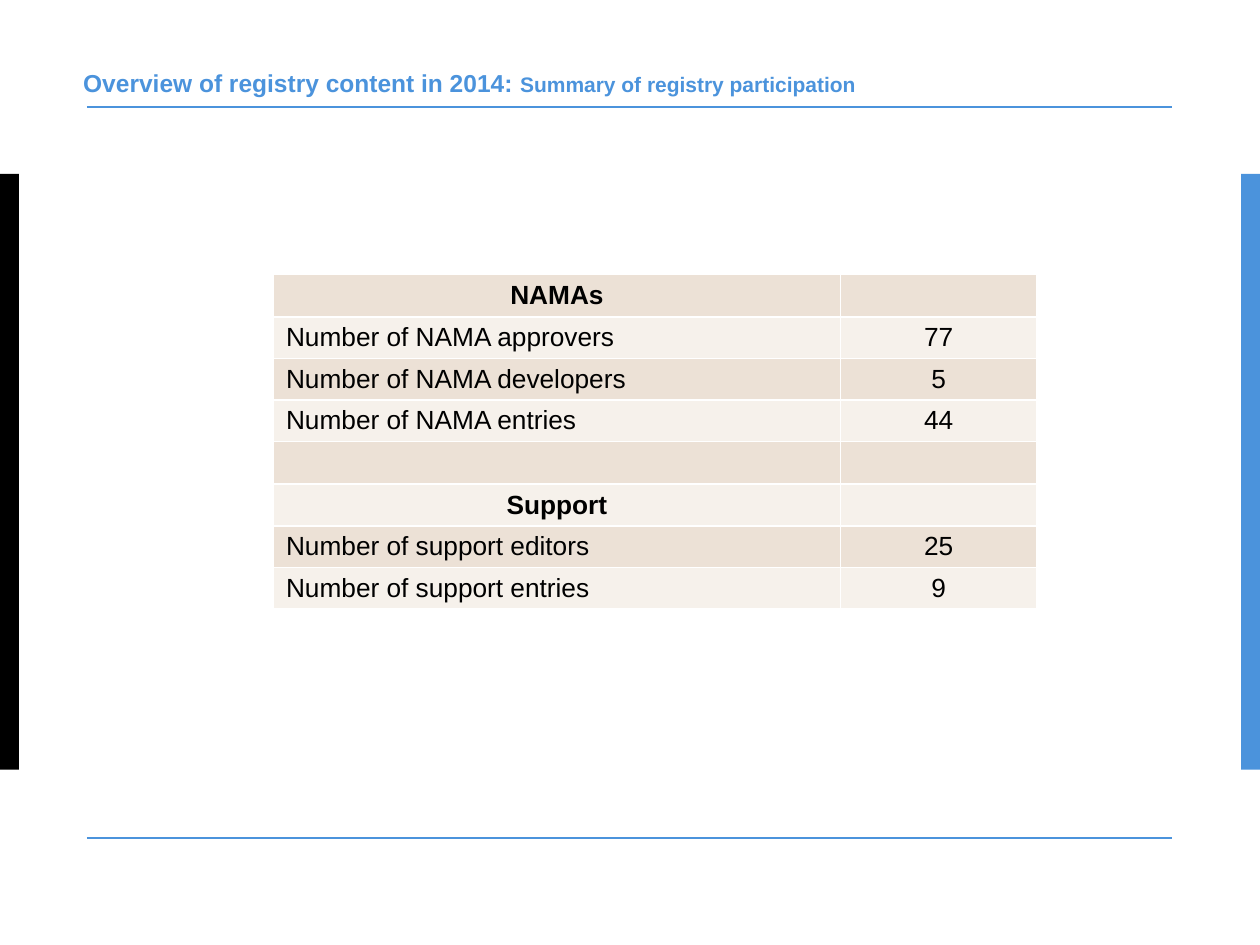
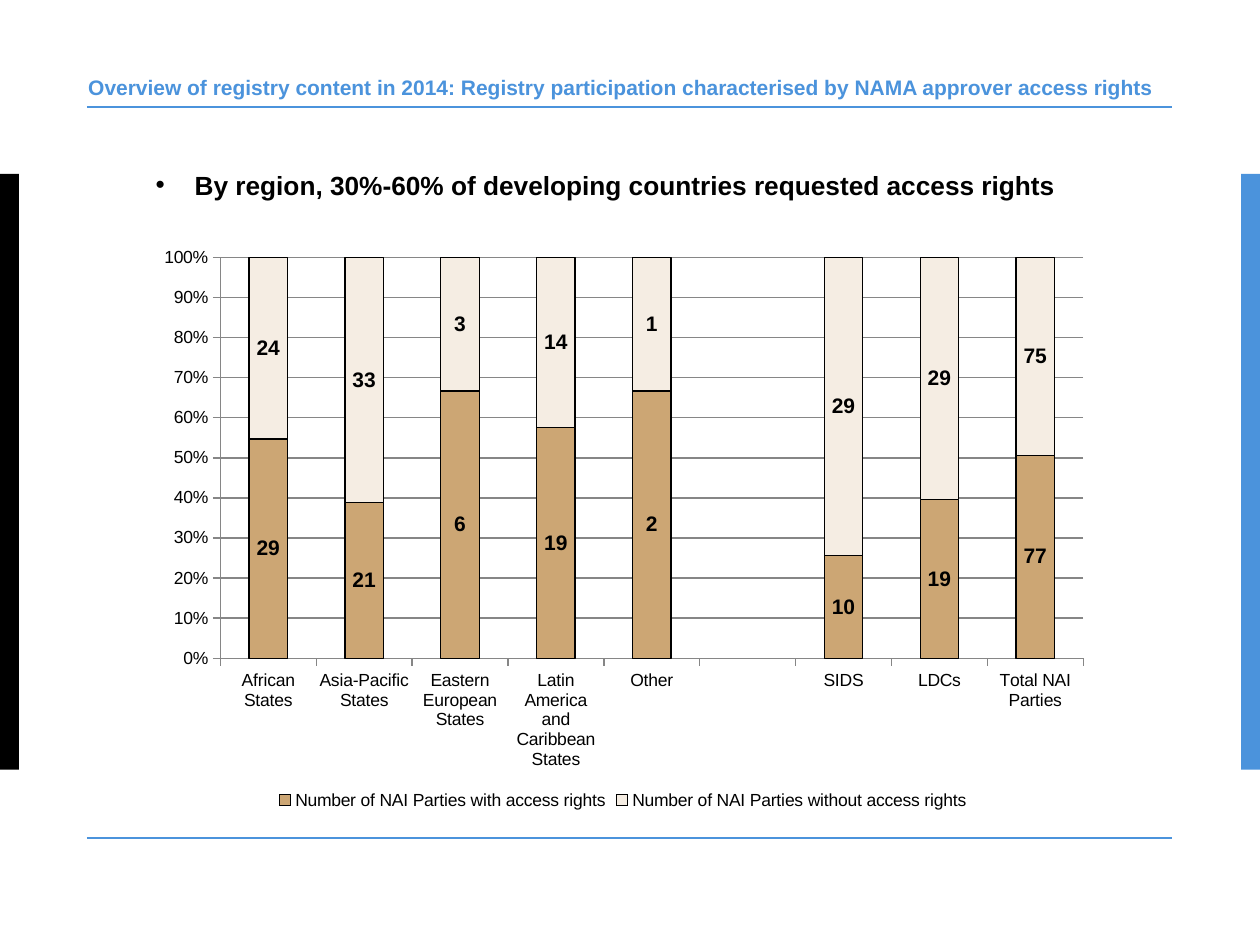
from dataclasses import dataclass

from lxml import etree
from pptx import Presentation
from pptx.chart.data import CategoryChartData
from pptx.dml.color import RGBColor
from pptx.enum.chart import XL_CHART_TYPE, XL_LEGEND_POSITION, XL_TICK_MARK
from pptx.enum.shapes import MSO_CONNECTOR, MSO_SHAPE
from pptx.enum.text import MSO_ANCHOR, MSO_AUTO_SIZE, PP_ALIGN
from pptx.oxml.ns import qn
from pptx.util import Emu, Pt

STACKED_100 = XL_CHART_TYPE.COLUMN_STACKED_100
LEGEND_BOTTOM = XL_LEGEND_POSITION.BOTTOM
TICK_OUTSIDE, TICK_NONE = XL_TICK_MARK.OUTSIDE, XL_TICK_MARK.NONE
STRAIGHT = MSO_CONNECTOR.STRAIGHT
RECTANGLE = MSO_SHAPE.RECTANGLE
MIDDLE = MSO_ANCHOR.MIDDLE
FIXED_SIZE = MSO_AUTO_SIZE.NONE
LEFT, CENTER = PP_ALIGN.LEFT, PP_ALIGN.CENTER

EMU_PER_PX = 9144  # 100 px to the inch
PAGE_WIDTH, PAGE_HEIGHT = 1000, 750
TITLE_ONLY = 5


@dataclass(frozen=True)
class Theme:
    font: str = "Arial"
    blue: str = "4B93DC"
    black: str = "000000"
    white: str = "FFFFFF"
    grid: str = "868686"
    row_fills: tuple = ("ECE1D6", "F6F1EB")
    series_fills: tuple = ("CCA674", "F5EDE3")
    title_size: int = 14
    subtitle_size: int = 12
    title_spacing: int = 15
    body_size: int = 15
    label_size: int = 12
    chart_size: int = 10
    line_width: float = 1
    bar_outline: float = 0.75


THEME = Theme()


def px(*lengths):
    return [Emu(length * EMU_PER_PX) for length in lengths]


def rgb(color):
    return RGBColor.from_string(color)


def format_font(font, size, color, bold=False):
    font.name = THEME.font
    font.size = Pt(size)
    font.bold = bold
    font.color.rgb = rgb(color)


def write(para, text, size=THEME.body_size, color=THEME.black, bold=False, align=LEFT):
    para.alignment = align
    span = para.add_run()
    span.text = text
    format_font(span.font, size, color, bold)


def set_line(line, color, width):
    line.color.rgb = rgb(color)
    line.width = Pt(width)


def add_cell_borders(cell):
    properties = cell._tc.get_or_add_tcPr()
    for side in ("a:lnL", "a:lnR", "a:lnT", "a:lnB"):
        border = etree.SubElement(properties, qn(side), w=str(Pt(THEME.line_width)))
        fill = etree.SubElement(border, qn("a:solidFill"))
        etree.SubElement(fill, qn("a:srgbClr"), val=THEME.white)


def place_plot(chart, **fractions):
    """Fix the inner plot area, as fractions of the chart frame."""
    plot_area = chart._chartSpace.find(".//" + qn("c:plotArea"))
    layout = plot_area.find(qn("c:layout"))
    if layout is None:
        layout = etree.Element(qn("c:layout"))
        plot_area.insert(0, layout)
    manual = etree.SubElement(layout, qn("c:manualLayout"))
    settings = {"layoutTarget": "inner", "xMode": "edge", "yMode": "edge", **fractions}
    for name, value in settings.items():
        etree.SubElement(manual, qn("c:" + name), val=str(value))


class DeckBuilder:
    def __init__(self, theme):
        self.theme = theme
        self.deck = Presentation()
        self.deck.slide_width, self.deck.slide_height = px(PAGE_WIDTH, PAGE_HEIGHT)
        self.page = None

    def add_page(self):
        self.page = self.deck.slides.add_slide(self.deck.slide_layouts[TITLE_ONLY])
        band_width = 15
        self.add_band(0, band_width, self.theme.black)
        self.add_band(PAGE_WIDTH - band_width, band_width, self.theme.blue)
        for y in (85, 665):
            self.add_rule(y)

    def add_band(self, left, width, color):
        band = self.page.shapes.add_shape(RECTANGLE, *px(left, 138, width, 473))
        band.shadow.inherit = False
        band.fill.solid()
        band.fill.fore_color.rgb = rgb(color)
        band.line.fill.background()

    def add_rule(self, y):
        rule = self.page.shapes.add_connector(STRAIGHT, *px(69, y, 930, y))
        set_line(rule.line, self.theme.blue, self.theme.line_width)
        etree.SubElement(rule._element.spPr, qn("a:effectLst"))

    def add_title(self, left, top, *parts):
        """Write the title from (text, size) parts."""
        title = self.page.shapes.title
        title.left, title.top, title.width, title.height = px(left, top, 861, 34)
        frame = title.text_frame
        frame.word_wrap = True
        frame.auto_size = FIXED_SIZE
        frame.vertical_anchor = MIDDLE
        frame.margin_left = frame.margin_right = frame.margin_top = frame.margin_bottom = 0
        para = frame.paragraphs[0]
        para.line_spacing = Pt(self.theme.title_spacing)
        for text, size in parts:
            write(para, text, size=size, color=self.theme.blue, bold=True)

    def add_bullet(self, text, left, top, width, height):
        box = self.page.shapes.add_textbox(*px(left, top, width, height))
        box.text_frame.word_wrap = True
        para = box.text_frame.paragraphs[0]
        properties = para._p.get_or_add_pPr()
        indent = px(31)[0]
        properties.set("marL", str(indent))
        properties.set("indent", str(-indent))
        etree.SubElement(properties, qn("a:buFont"), typeface=self.theme.font)
        etree.SubElement(properties, qn("a:buChar"), char="•")
        write(para, text, bold=True, align=CENTER)

    def add_table(self, rows, left, top, column_widths, row_height):
        """Rows are (label, value); a row with a label alone is a heading."""
        frame = self.page.shapes.add_table(
            len(rows), len(column_widths),
            *px(left, top, sum(column_widths), row_height * len(rows)))
        table = frame.table
        table.first_row = table.horz_banding = False
        for column, width in zip(table.columns, px(*column_widths)):
            column.width = width
        for index, (label, value) in enumerate(rows):
            table.rows[index].height = px(row_height)[0]
            fill = self.theme.row_fills[index % 2]
            heading = not value
            self.fill_cell(table.cell(index, 0), label, fill, heading,
                           CENTER if heading else LEFT)
            self.fill_cell(table.cell(index, 1), value, fill, False, CENTER)

    def fill_cell(self, cell, text, fill, bold, align):
        add_cell_borders(cell)
        cell.fill.solid()
        cell.fill.fore_color.rgb = rgb(fill)
        cell.vertical_anchor = MIDDLE
        cell.margin_top, cell.margin_bottom = px(4, 4)
        para = cell.text_frame.paragraphs[0]
        if text:
            write(para, text, bold=bold, align=align)
        else:
            size = str(self.theme.body_size * 100)
            etree.SubElement(para._p, qn("a:endParaRPr"), sz=size)

    def add_share_chart(self, categories, series_values, left, top, width, height):
        data = CategoryChartData()
        data.categories = categories
        for name, values in series_values.items():
            data.add_series(name, values)
        chart = self.page.shapes.add_chart(
            STACKED_100, *px(left, top, width, height), data).chart
        format_font(chart.font, self.theme.chart_size, self.theme.black)
        chart.has_title = False
        chart.has_legend = True
        chart.legend.position = LEGEND_BOTTOM
        chart.legend.include_in_layout = False
        place_plot(chart, x=0.08, y=0.04, w=0.9, h=0.69)

        for axis in (chart.category_axis, chart.value_axis):
            axis.major_tick_mark = TICK_OUTSIDE
            axis.minor_tick_mark = TICK_NONE
            set_line(axis.format.line, self.theme.grid, self.theme.bar_outline)
        value_axis = chart.value_axis
        value_axis.has_major_gridlines = True
        set_line(value_axis.major_gridlines.format.line, self.theme.grid,
                 self.theme.bar_outline)
        value_axis.tick_labels.number_format = "0%"
        value_axis.tick_labels.number_format_is_linked = False

        plot = chart.plots[0]
        plot.gap_width, plot.overlap = 150, 100
        plot.vary_by_categories = False
        for series, fill in zip(plot.series, self.theme.series_fills):
            series.format.fill.solid()
            series.format.fill.fore_color.rgb = rgb(fill)
            set_line(series.format.line, self.theme.black, self.theme.bar_outline)
            series.data_labels.show_value = True
            format_font(series.data_labels.font, self.theme.label_size,
                        self.theme.black, bold=True)


def build_summary(builder):
    builder.add_page()
    builder.add_title(66, 50,
                      ("Overview of registry content in 2014: ", THEME.title_size),
                      ("Summary of registry participation", THEME.subtitle_size))
    participation = [
        ("NAMAs", ""),
        ("Number of NAMA approvers", "77"),
        ("Number of NAMA developers", "5"),
        ("Number of NAMA entries", "44"),
        ("", ""),
        ("Support", ""),
        ("Number of support editors", "25"),
        ("Number of support entries", "9"),
    ]
    builder.add_table(participation, 217, 218, column_widths=(450, 156), row_height=33)


def build_access_rights(builder):
    builder.add_page()
    builder.add_title(70, 52,
                      ("Overview of registry content in 2014: Registry participation "
                       "characterised by NAMA approver access rights",
                       THEME.subtitle_size))
    builder.add_bullet("By region, 30%-60% of developing countries requested access rights",
                       67, 129, 827, 35)
    regions = ["African States", "Asia-Pacific States", "Eastern European States",
               "Latin America and Caribbean States", "Other", "",
               "SIDS", "LDCs", "Total NAI Parties"]
    parties = {
        "Number of NAI Parties with access rights": (29, 21, 6, 19, 2, None, 10, 19, 77),
        "Number of NAI Parties without access rights": (24, 33, 3, 14, 1, None, 29, 29, 75),
    }
    builder.add_share_chart(regions, parties, 114, 186, 761, 461)


def main():
    builder = DeckBuilder(THEME)
    build_summary(builder)
    build_access_rights(builder)
    builder.deck.save("out.pptx")


if __name__ == "__main__":
    main()
